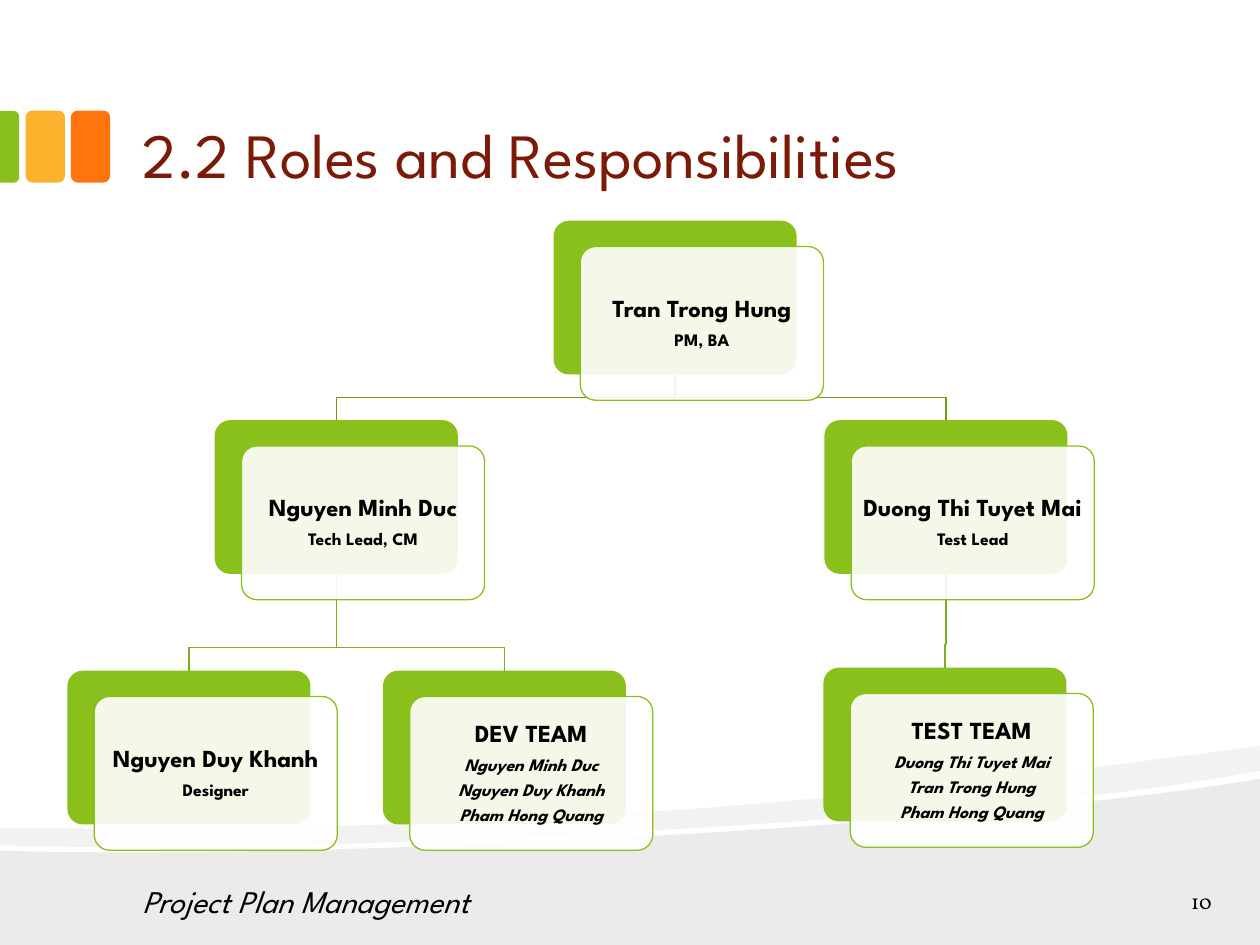
from dataclasses import dataclass
from typing import Any, NamedTuple, Optional

from lxml.etree import SubElement
from pptx import Presentation
from pptx.dml.color import RGBColor
from pptx.enum.shapes import MSO_SHAPE
from pptx.enum.text import MSO_ANCHOR, MSO_AUTO_SIZE, PP_ALIGN
from pptx.oxml.ns import qn
from pptx.util import Cm, Pt


@dataclass(frozen=True)
class Theme:
    green: str = "89C01C"
    yellow: str = "FCB22C"
    orange: str = "FE750E"
    upper_link: str = "6E9A16"
    lower_link: str = "7CAE19"
    heading: str = "7A1A07"
    ink: str = "000000"
    paper: str = "FFFFFF"
    font: str = "League Spartan"
    number_font: str = "Vollkorn"
    heading_size: int = 36
    footer_size: int = 18
    name_size: int = 14
    number_size: int = 12
    role_size: int = 10
    link_width: float = 0.75


class Point(NamedTuple):
    x: float
    y: float


class Box(NamedTuple):
    left: float
    top: float
    width: float
    height: float


@dataclass(frozen=True)
class Wave:
    points: tuple[Point, ...]
    curve_starts: tuple[int, ...]
    opacity: int


@dataclass(frozen=True)
class Member:
    left: float
    top: float
    name: str
    roles: tuple[str, ...]
    is_team: bool = False


THEME = Theme()
PAGE = Point(25.4, 19.05)
CARD = Point(4.9, 3.1)
CARD_SHIFT = Point(0.54, 0.52)
LINK_DROP = 0.46

GROUND = Wave((
    Point(0, 17.15), Point(6.71, 17.35), Point(19.86, 16.64), Point(25.4, 15.7),
    PAGE, Point(0, PAGE.y),
), (0,), 8)
CREST = Wave((
    Point(0, 16.69), Point(12.42, 16.81), Point(18.49, 15.93), Point(25.4, 15.04),
    Point(25.4, 15.54), Point(23.93, 15.82), Point(21.89, 16.08), Point(19.61, 16.28),
    Point(13.28, 16.84), Point(4.9, 17.2), Point(0, 17.04),
), (0, 4, 7), 5)

MANAGER = Member(11.16, 4.45, "Tran Trong Hung", ("PM, BA",))
TECH_LEAD = Member(4.33, 8.47, "Nguyen Minh Duc", ("Tech Lead, CM",))
DESIGNER = Member(1.36, 13.52, "Nguyen Duy Khanh", ("Designer",))
DEV_TEAM = Member(7.72, 13.52, "DEV TEAM", ("Nguyen Minh Duc", "Nguyen Duy Khanh", "Pham Hong Quang"), True)
TEST_LEAD = Member(16.62, 8.47, "Duong Thi Tuyet Mai", ("Test Lead",))
TEST_TEAM = Member(16.6, 13.46, "TEST TEAM", ("Duong Thi Tuyet Mai", "Tran Trong Hung", "Pham Hong Quang"), True)
MEMBERS = (MANAGER, TECH_LEAD, DESIGNER, DEV_TEAM, TEST_LEAD, TEST_TEAM)
LINKS = (
    (TEST_LEAD, TEST_TEAM, THEME.lower_link),
    (MANAGER, TEST_LEAD, THEME.upper_link),
    (TECH_LEAD, DEV_TEAM, THEME.lower_link),
    (TECH_LEAD, DESIGNER, THEME.lower_link),
    (MANAGER, TECH_LEAD, THEME.upper_link),
)


def apply_format(target: Any, values: dict[str, Any]) -> None:
    for attribute, value in values.items():
        setattr(target, attribute, value)


def paint(shape: Any, fill: Optional[str] = None, line: Optional[str] = None, opacity: int = 100) -> None:
    shape.shadow.inherit = False
    if fill:
        shape.fill.solid()
        shape.fill.fore_color.rgb = RGBColor.from_string(fill)
        if opacity < 100:
            tint = shape._element.spPr.find(qn("a:solidFill")).find(qn("a:srgbClr"))
            SubElement(tint, qn("a:alpha"), val=str(opacity * 1000))
    else:
        shape.fill.background()
    if line:
        shape.line.color.rgb = RGBColor.from_string(line)
        shape.line.width = Pt(THEME.link_width)
    else:
        shape.line.fill.background()


def draw_block(slide: Any, kind: MSO_SHAPE, box: Box, **colours: Any) -> Any:
    block = slide.shapes.add_shape(kind, *map(Cm, box))
    paint(block, **colours)
    return block


def draw_outline(slide: Any, points: tuple[Point, ...], closed: bool, **colours: Any) -> Any:
    corners = [(Cm(point.x), Cm(point.y)) for point in points]
    builder = slide.shapes.build_freeform(*corners[0])
    builder.add_line_segments(corners[1:], close=closed)
    outline = builder.convert_to_shape()
    paint(outline, **colours)
    return outline


def draw_wave(slide: Any, wave: Wave) -> None:
    outline = draw_outline(slide, wave.points, True, fill=THEME.ink, opacity=wave.opacity)
    contour = next(outline._element.spPr.iter(qn("a:path")))
    segments = contour.findall(qn("a:lnTo"))
    for start in wave.curve_starts:
        controls = segments[start:start + 3]
        bend = SubElement(contour, qn("a:cubicBezTo"))
        controls[0].addprevious(bend)
        for control in controls:
            bend.append(control[0])
            contour.remove(control)


def write(paragraph: Any, text: str, size: int, colour: str = THEME.ink, font: str = THEME.font, **style: Any) -> None:
    run = paragraph.add_run()
    run.text = text
    apply_format(run.font, {"name": font, "size": Pt(size), **style})
    run.font.color.rgb = RGBColor.from_string(colour)


def set_frame(frame: Any, anchor: MSO_ANCHOR, side: float, edge: float) -> None:
    apply_format(frame, {
        "word_wrap": True, "auto_size": MSO_AUTO_SIZE.NONE, "vertical_anchor": anchor,
        "margin_left": Cm(side), "margin_right": Cm(side),
        "margin_top": Cm(edge), "margin_bottom": Cm(edge),
    })


def draw_tabs(slide: Any) -> None:
    for left, colour in ((1.43, THEME.orange), (0.52, THEME.yellow)):
        draw_block(slide, MSO_SHAPE.ROUNDED_RECTANGLE, Box(left, 2.23, 0.79, 1.45), fill=colour)
    edge_tab = draw_block(slide, MSO_SHAPE.ROUND_2_SAME_RECTANGLE, Box(-0.53, 2.77, 1.45, 0.38), fill=THEME.green)
    edge_tab.rotation = 90
    edge_tab.adjustments[0] = 0.29


def draw_link(slide: Any, parent: Member, child: Member, colour: str) -> None:
    start = Point(parent.left + CARD.x / 2, parent.top + CARD.y)
    end = Point(child.left + CARD.x / 2, child.top)
    turn = end.y - LINK_DROP
    draw_outline(slide, (start, Point(start.x, turn), Point(end.x, turn), end), False, line=colour)


def draw_member(slide: Any, member: Member) -> None:
    back = draw_block(slide, MSO_SHAPE.ROUNDED_RECTANGLE, Box(member.left, member.top, *CARD), fill=THEME.green)
    front_box = Box(member.left + CARD_SHIFT.x, member.top + CARD_SHIFT.y, *CARD)
    front = draw_block(slide, MSO_SHAPE.ROUNDED_RECTANGLE, front_box, fill=THEME.paper, line=THEME.green, opacity=90)
    for card in (back, front):
        card.adjustments[0] = 0.1
    frame = front.text_frame
    set_frame(frame, MSO_ANCHOR.MIDDLE, 0.05, 0.05)
    for index, text in enumerate((member.name, *member.roles)):
        paragraph = frame.add_paragraph() if index else frame.paragraphs[0]
        apply_format(paragraph, {"alignment": PP_ALIGN.CENTER, "line_spacing": 0.9})
        gap = SubElement(paragraph._p.get_or_add_pPr(), qn("a:spcAft"))
        SubElement(gap, qn("a:spcPct"), val="35000")
        size = THEME.role_size if index else THEME.name_size
        write(paragraph, text, size, bold=True, italic=bool(index) and member.is_team)


def draw_footer(slide: Any, box: Box, text: str, size: int, align: PP_ALIGN, **style: Any) -> None:
    footer = slide.shapes.add_textbox(*map(Cm, box)).text_frame
    set_frame(footer, MSO_ANCHOR.MIDDLE, 0.33, 0.18)
    footer.paragraphs[0].alignment = align
    write(footer.paragraphs[0], text, size, **style)


def draw_title(slide: Any) -> None:
    title = slide.shapes.title
    apply_format(title, {"left": Cm(2.54), "top": Cm(0.43), "width": Cm(20.32), "height": Cm(3.61)})
    set_frame(title.text_frame, MSO_ANCHOR.BOTTOM, 0.33, 0.18)
    heading = title.text_frame.paragraphs[0]
    heading.alignment = PP_ALIGN.LEFT
    write(heading, "2.2 Roles and Responsibilities", THEME.heading_size, THEME.heading)


def main() -> None:
    deck = Presentation()
    apply_format(deck, {"slide_width": Cm(PAGE.x), "slide_height": Cm(PAGE.y)})
    slide = deck.slides.add_slide(deck.slide_layouts[5])
    for wave in (GROUND, CREST):
        draw_wave(slide, wave)
    draw_tabs(slide)
    draw_title(slide)
    for link in LINKS:
        draw_link(slide, *link)
    for member in MEMBERS:
        draw_member(slide, member)
    draw_footer(slide, Box(23.06, 17.91, 1.7, 0.51), "10", THEME.number_size, PP_ALIGN.RIGHT, font=THEME.number_font)
    draw_footer(slide, Box(2.54, 17.91, 17.27, 0.51), "Project Plan Management", THEME.footer_size, PP_ALIGN.LEFT, italic=True)
    deck.save("out.pptx")


if __name__ == "__main__":
    main()
